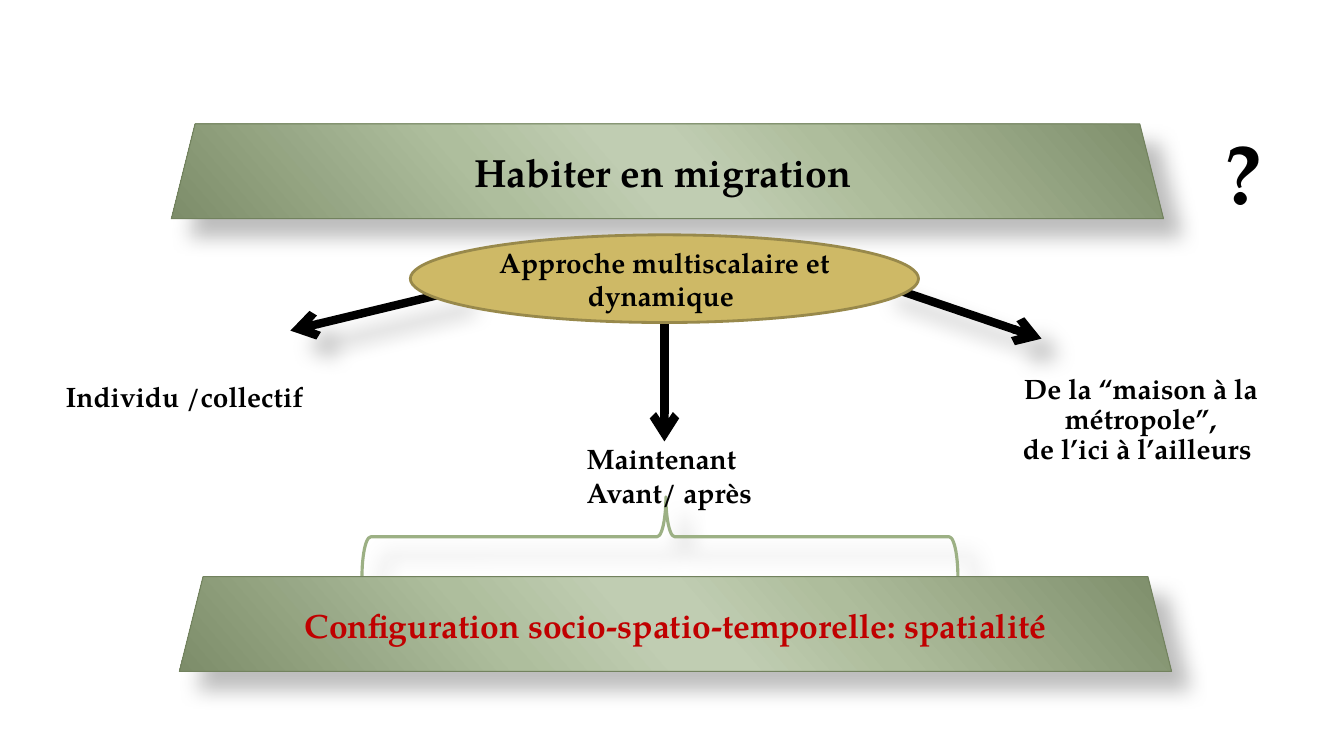
import lxml.etree
import pptx
import pptx.dml.color
import pptx.enum.shapes
import pptx.enum.text
import pptx.oxml.ns
import pptx.util

Inches = pptx.util.Inches
Pt = pptx.util.Pt
qn = pptx.oxml.ns.qn
KIND = pptx.enum.shapes.MSO_SHAPE
ALIGN = pptx.enum.text.PP_ALIGN
FONT = "TeX Gyre Pagella"
STOPS = [(0, "7D8D6A"), (33, "AEBD9C"), (47, "C0CDB2"),
         (53, "C0CDB2"), (68, "AEBE9D"), (100, "7D8D6A")]


def color(code):
    return pptx.dml.color.RGBColor.from_string(code)


def node(owner, tag, **attrs):
    return lxml.etree.SubElement(owner, qn(tag), attrs)


def apply(target, form):
    for name, value in form.items():
        setattr(target, name, value)


def stroke(part, code, width):
    part.line.color.rgb = color(code)
    part.line.width = Pt(width)


def shade(part, cast=True):
    """Replace the theme effect by a soft shadow, or by none."""
    effect = node(part._element.spPr, "a:effectLst")
    if cast:
        cast = node(effect, "a:outerShdw", blurRad=str(Pt(15)), dist=str(Pt(18)),
                    dir="2700000", algn="bl", rotWithShape="0")
        node(node(cast, "a:srgbClr", val="000000"), "a:alpha", val="26000")


def write(part, lines, size, hue="000000", align=ALIGN.CENTER, space=1.0,
          wrap=True, anchor=pptx.enum.text.MSO_ANCHOR.MIDDLE):
    frame = part.text_frame
    apply(frame, {"word_wrap": wrap, "vertical_anchor": anchor})
    frame.text = "\n".join(lines)
    for para in frame.paragraphs:
        apply(para, {"alignment": align, "line_spacing": space})
        for run in para.runs:
            apply(run.font, {"name": FONT, "size": Pt(size), "bold": True})
            run.font.color.rgb = color(hue)


def shape(slide, kind, box):
    return slide.shapes.add_shape(kind, *map(Inches, box))


def band(slide, box, text, size, hue="000000"):
    part = shape(slide, KIND.TRAPEZOID, box)
    part.fill.gradient()
    grad = part._element.spPr.find(qn("a:gradFill"))
    stops = grad.find(qn("a:gsLst"))
    for old in list(stops):
        stops.remove(old)
    for place, code in STOPS:
        stop = node(stops, "a:gs", pos=str(place * 1000))
        node(stop, "a:srgbClr", val=code)
    slope = grad.find(qn("a:lin"))
    slope.set("ang", "8350000")
    slope.set("scaled", "1")
    stroke(part, "72825E", 0.75)
    shade(part)
    write(part, [text], size, hue)


def label(slide, box, lines, size=20, **form):
    part = slide.shapes.add_textbox(*map(Inches, box))
    write(part, lines, size, anchor=pptx.enum.text.MSO_ANCHOR.TOP, **form)


def arrow(slide, start, end, cast=True):
    part = slide.shapes.add_connector(
        pptx.enum.shapes.MSO_CONNECTOR.STRAIGHT, *map(Inches, start + end))
    stroke(part, "000000", 6)
    node(part.line._get_or_add_ln(), "a:tailEnd", type="arrow")
    shade(part, cast)


def brace(slide, box):
    # A left brace turned a quarter: its box swaps sides about the centre
    left, top, width, height = box
    side = (left + (width - height) / 2, top + (height - width) / 2, height, width)
    part = shape(slide, KIND.LEFT_BRACE, side)
    part.rotation = 90
    part.adjustments[0] = 0.11
    part.adjustments[1] = 0.49
    part.fill.background()
    stroke(part, "9CB084", 2.25)
    shade(part)


def hub(slide, box, text):
    part = shape(slide, KIND.OVAL, box)
    part.fill.solid()
    part.fill.fore_color.rgb = color("CEB966")
    stroke(part, "98894B", 2)
    part.shadow.inherit = False
    write(part, [text], 20)


def main():
    deck = pptx.Presentation()
    apply(deck, {"slide_width": Inches(13.33), "slide_height": Inches(7.5)})
    slide = deck.slides.add_slide(deck.slide_layouts[6])

    # Title band
    band(slide, (1.7, 1.23, 9.84, 0.94), "Habiter en migration ", 28)
    label(slide, (11.78, 1.15, 1.1, 1.11), ["?"], 60)

    # Three directions
    label(slide, (0.29, 3.75, 3.15, 0.4), ["Individu /collectif "], space=0.9)
    label(slide, (9.66, 3.67, 3.31, 1.01),
          ["De la “maison à la métropole”,", "de l’ici à l’ailleurs "], space=0.9)
    arrow(slide, (4.54, 2.88), (2.88, 3.28))
    brace(slide, (3.59, 4.93, 5.91, 0.79))
    arrow(slide, (8.71, 2.81), (10.33, 3.36))
    arrow(slide, (6.59, 3.12), (6.59, 4.38), cast=False)
    label(slide, (5.72, 4.33, 1.89, 0.77), ["Maintenant", "Avant/ après"],
          align=ALIGN.LEFT, wrap=False)

    # Closing band and central oval
    band(slide, (1.78, 5.72, 9.84, 0.94),
         "Configuration socio-spatio-temporelle: spatialité", 24, "C00000")
    hub(slide, (4.07, 2.33, 5.04, 0.87), "Approche multiscalaire et dynamique ")
    deck.save("out.pptx")


if __name__ == "__main__":
    main()
